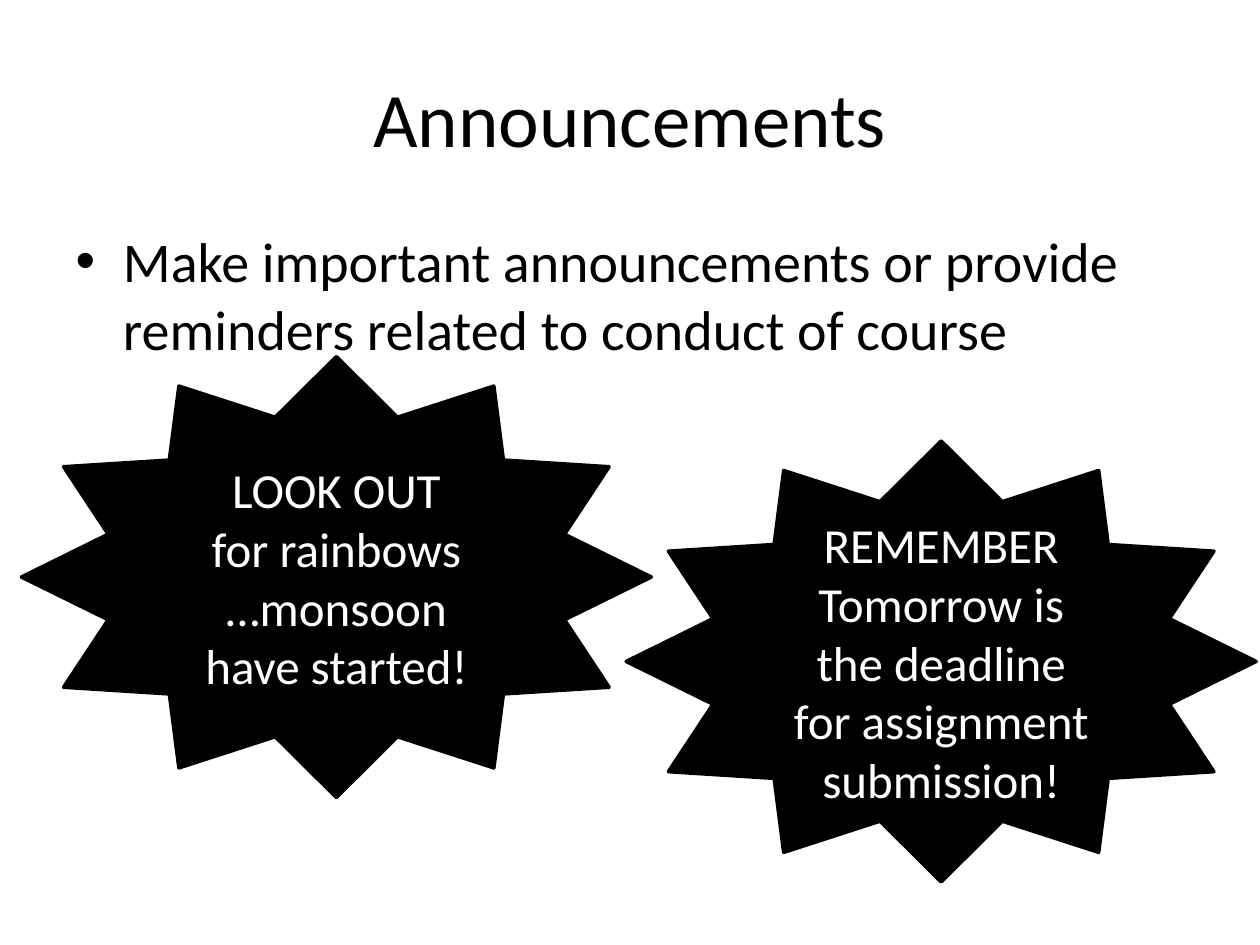
from pptx import Presentation
from pptx.dml.color import RGBColor
from pptx.enum.shapes import MSO_SHAPE
from pptx.enum.text import MSO_ANCHOR, PP_ALIGN
from pptx.util import Inches, Pt

STAR = MSO_SHAPE.STAR_12_POINT
MIDDLE = MSO_ANCHOR.MIDDLE
TOP = MSO_ANCHOR.TOP
CENTER = PP_ALIGN.CENTER
LEFT = PP_ALIGN.LEFT

FONT = "Calibri"
BLACK = "000000"
WHITE = "FFFFFF"
SLIDE_WIDTH, SLIDE_HEIGHT = 10, 7.5
STAR_SIZE = (5, 3.5)


def color(value):
    return RGBColor.from_string(value)


def place(shape, box):
    shape.left, shape.top, shape.width, shape.height = map(Inches, box)


def write_text(shape, lines, size, fill=BLACK, align=CENTER, anchor=MIDDLE):
    frame = shape.text_frame
    frame.word_wrap = True
    frame.vertical_anchor = anchor
    frame.text = "\n".join(lines)
    for paragraph in frame.paragraphs:
        paragraph.alignment = align
        for run in paragraph.runs:
            run.font.name = FONT
            run.font.size = Pt(size)
            run.font.color.rgb = color(fill)


def add_heading(slide, box, text):
    title = slide.shapes.title
    place(title, box)
    write_text(title, [text], size=44)


def add_bullets(slide, box, lines):
    body = slide.placeholders[1]
    place(body, box)
    write_text(body, lines, size=32, align=LEFT, anchor=TOP)


def add_star(slide, box, lines):
    star = slide.shapes.add_shape(STAR, *map(Inches, box))
    star.shadow.inherit = False
    star.fill.solid()
    star.fill.fore_color.rgb = color(BLACK)
    star.line.color.rgb = color(BLACK)
    star.line.width = Pt(2)
    write_text(star, lines, size=28, fill=WHITE)


def main():
    presentation = Presentation()
    presentation.slide_width = Inches(SLIDE_WIDTH)
    presentation.slide_height = Inches(SLIDE_HEIGHT)
    slide = presentation.slides.add_slide(presentation.slide_layouts[1])
    margin = SLIDE_WIDTH * 0.05
    content_width = SLIDE_WIDTH - 2 * margin
    add_heading(slide, (margin, 0.3, content_width, 1.25), "Announcements")
    add_bullets(slide, (margin, 1.75, content_width, 4.95), [
        "Make important announcements or provide reminders related to conduct of course",
    ])
    add_star(slide, (0.17, 2.83, *STAR_SIZE), [
        "LOOK OUT", "for rainbows", "…monsoon have started!",
    ])
    add_star(slide, (4.97, 3.5, *STAR_SIZE), [
        "REMEMBER Tomorrow is the deadline for assignment submission!",
    ])
    presentation.save("out.pptx")


if __name__ == "__main__":
    main()
